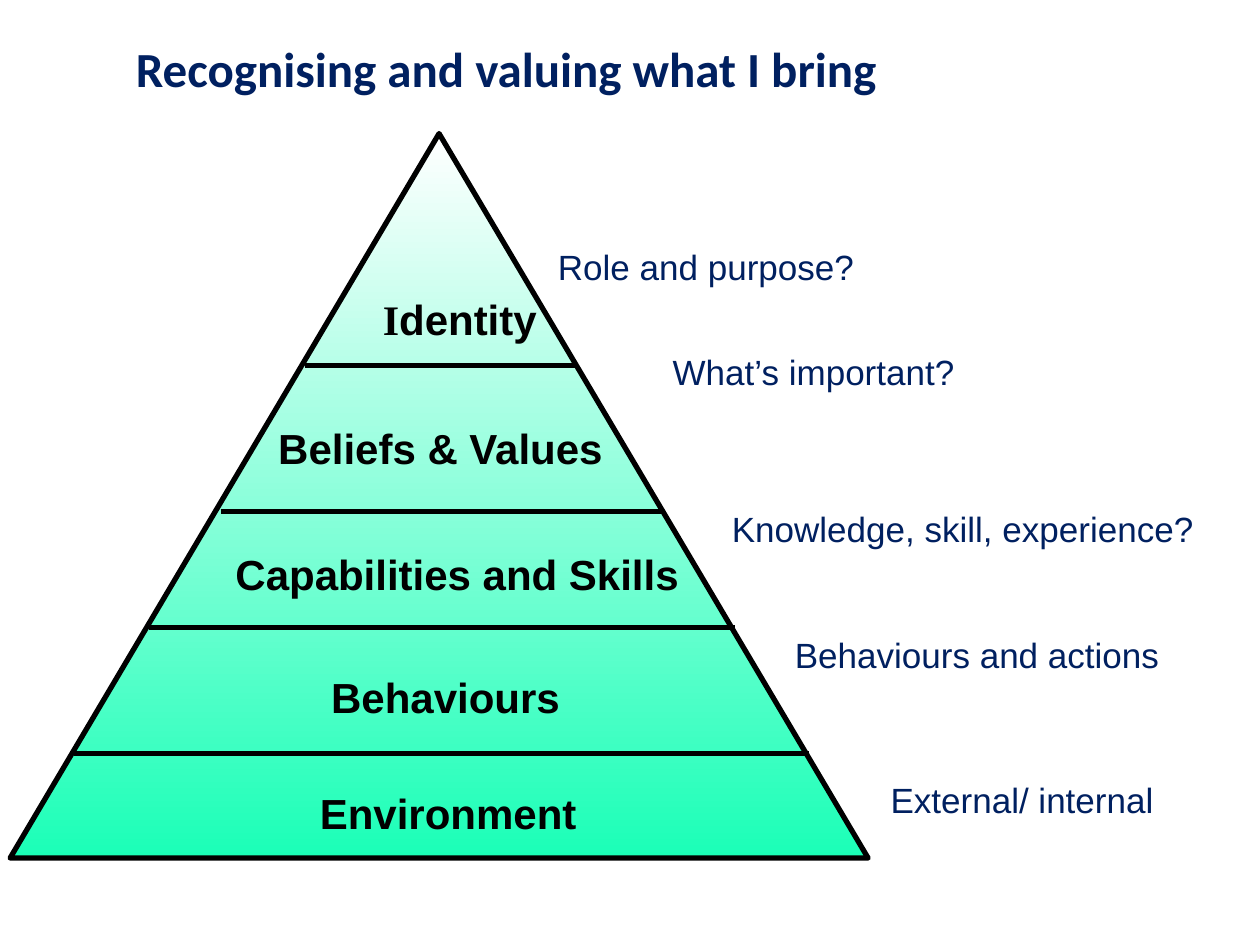
"""Build a slide with a five-level pyramid and a prompt beside each level."""
from dataclasses import dataclass

from lxml import etree
from pptx import Presentation
from pptx.dml.color import RGBColor
from pptx.enum.shapes import MSO_CONNECTOR, MSO_SHAPE
from pptx.enum.text import MSO_AUTO_SIZE
from pptx.oxml.ns import qn
from pptx.slide import Slide
from pptx.util import Pt

LINE = MSO_CONNECTOR.STRAIGHT
PEAK = MSO_SHAPE.ISOSCELES_TRIANGLE
GROW = MSO_AUTO_SIZE.SHAPE_TO_FIT_TEXT
SCALE = 9144


@dataclass(frozen=True)
class Style:
    font: str
    size: int
    color: str
    bold: bool = False


@dataclass(frozen=True)
class Theme:
    title: Style = Style("Calibri", 28, "002060", True)
    level: Style = Style("Arial", 24, "000000", True)
    serif: Style = Style("Times New Roman", 24, "000000", True)
    prompt: Style = Style("Arial", 20, "002060")
    ink: str = "000000"
    top: str = "FFFFFF"
    base: str = "1BFFB7"
    stroke: int = 3


@dataclass(frozen=True)
class Label:
    words: tuple[str, ...]
    styles: tuple[Style, ...]
    left: int
    top: int
    width: int
    height: int
    wrap: bool = False


@dataclass(frozen=True)
class Cut:
    left: int
    right: int
    y: int


THEME = Theme()
TITLE, LEVEL, PROMPT = (THEME.title,), (THEME.level,), (THEME.prompt,)
CUTS = (
    Cut(59, 642, 598),
    Cut(118, 583, 498),
    Cut(175, 525, 406),
    Cut(242, 458, 290),
)
LABELS = (
    Label(("Recognising and valuing what I bring",), TITLE, 98, 26, 875, 57, True),
    Label(("Role and purpose?",), PROMPT, 433, 190, 257, 44),
    Label(("What’s important?",), PROMPT, 524, 273, 378, 44, True),
    Label(("Knowledge, skill, experience?",), PROMPT, 571, 398, 411, 44, True),
    Label(("Behaviours and actions",), PROMPT, 621, 498, 312, 44),
    Label(("External/ internal",), PROMPT, 697, 613, 284, 44, True),
    Label(("I", "dentity"), (THEME.serif, THEME.level), 294, 228, 144, 51),
    Label(("Beliefs & Values",), LEVEL, 211, 330, 280, 51),
    Label(("Capabilities and Skills",), LEVEL, 177, 430, 372, 51),
    Label(("Behaviours",), LEVEL, 253, 528, 204, 51),
    Label(("Environment",), LEVEL, 244, 620, 226, 51),
)


def px(*values: int) -> list[int]:
    """Turn pixel lengths into EMU."""
    return [value * SCALE for value in values]


def rgb(code: str) -> RGBColor:
    """Turn a hex code into a colour."""
    return RGBColor.from_string(code)


def draw_peak(slide: Slide) -> None:
    """Draw the shaded triangle."""
    shape = slide.shapes.add_shape(PEAK, *px(8, 106, 681, 575))
    shape.shadow.inherit = False
    shape.fill.gradient()
    shape.fill.gradient_angle = 270
    for stop, code in zip(shape.fill.gradient_stops, (THEME.top, THEME.base)):
        stop.color.rgb = rgb(code)
    shape.line.color.rgb = rgb(THEME.ink)
    shape.line.width = Pt(THEME.stroke)


def draw_cut(slide: Slide, cut: Cut) -> None:
    """Draw one line between two levels."""
    line = slide.shapes.add_connector(LINE, *px(cut.left, cut.y, cut.right, cut.y))
    line.line.color.rgb = rgb(THEME.ink)
    line.line.width = Pt(THEME.stroke)
    etree.SubElement(line._element.spPr, qn("a:effectLst"))


def draw_label(slide: Slide, label: Label) -> None:
    """Draw one text box and style each of its runs."""
    box = slide.shapes.add_textbox(*px(label.left, label.top, label.width, label.height))
    frame = box.text_frame
    frame.word_wrap = label.wrap
    frame.auto_size = GROW
    frame.text = label.words[0]
    line = frame.paragraphs[0]
    for word in label.words[1:]:
        line.add_run().text = word
    for run, style in zip(line.runs, label.styles):
        run.font.name = style.font
        run.font.size = Pt(style.size)
        run.font.bold = style.bold
        run.font.color.rgb = rgb(style.color)


def main() -> None:
    """Build and save the slide."""
    deck = Presentation()
    deck.slide_width, deck.slide_height = px(1000, 750)
    slide = deck.slides.add_slide(deck.slide_layouts[6])
    draw_peak(slide)
    for cut in CUTS:
        draw_cut(slide, cut)
    for label in LABELS:
        draw_label(slide, label)
    deck.save("out.pptx")


if __name__ == "__main__":
    main()
